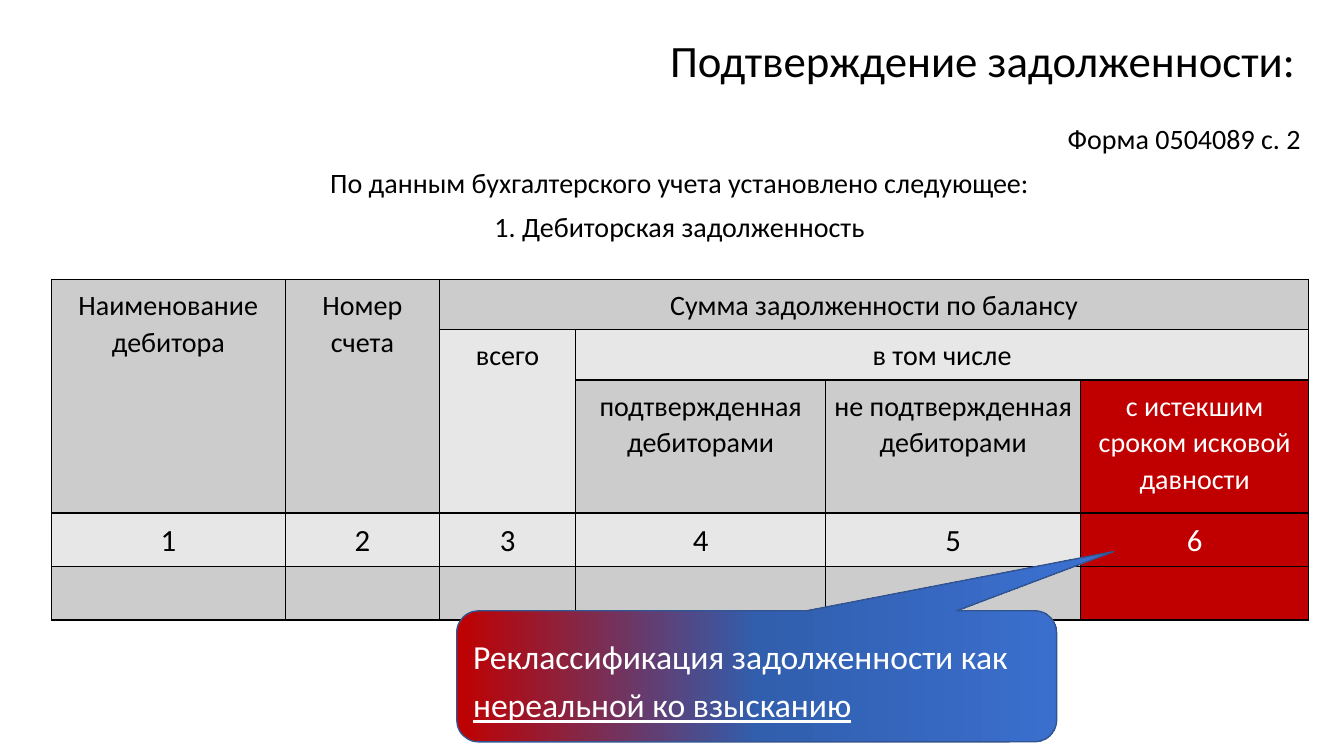
from copy import deepcopy
from dataclasses import dataclass

from lxml import etree
from pptx import Presentation
from pptx import util as u
from pptx.dml.color import RGBColor
from pptx.enum import shapes, text
from pptx.oxml.ns import qn


@dataclass(frozen=True)
class Theme:
    font: str = "Calibri"
    black: str = "000000"
    white: str = "FFFFFF"
    dark_band: str = "CCCCCC"
    light_band: str = "E7E7E7"
    red: str = "C00000"
    callout_stops: tuple = ((0, "C00000"), (0.5, "315EAD"), (1, "3A6FCE"))
    callout_line: str = "325491"
    title_size: int = 32
    body_size: int = 20
    number_size: int = 22
    callout_size: int = 24


theme = Theme()
align = text.PP_ALIGN


def format_paragraph(paragraph, size, color, alignment, spacing):
    paragraph.alignment = alignment
    paragraph.line_spacing = spacing
    for run in paragraph.runs:
        run.font.name = theme.font
        run.font.size = u.Pt(size)
        run.font.color.rgb = RGBColor.from_string(color)


def add_border(cell, side):
    line = etree.SubElement(cell._tc.get_or_add_tcPr(), qn(f"a:ln{side}"), w=str(u.Pt(1)))
    fill = etree.SubElement(line, qn("a:solidFill"))
    etree.SubElement(fill, qn("a:srgbClr"), val=theme.black)


presentation = Presentation()
presentation.slide_width = u.Inches(13.33)
presentation.slide_height = u.Inches(7.5)
slide = presentation.slides.add_slide(presentation.slide_layouts[6])

# Title
title = slide.shapes.add_textbox(u.Inches(3.25), u.Inches(0.36), u.Inches(9.7), u.Inches(0.54))
title.text_frame.word_wrap = True
title.text_frame.vertical_anchor = text.MSO_ANCHOR.MIDDLE
title.text_frame.text = "Подтверждение задолженности:"
format_paragraph(title.text_frame.paragraphs[0], theme.title_size, theme.black, align.RIGHT, 0.9)

# Form heading on a translucent white panel
heading = slide.shapes.add_textbox(u.Inches(0.48), u.Inches(1.19), u.Inches(12.52), u.Inches(4.96))
heading.fill.solid()
heading.fill.fore_color.rgb = RGBColor.from_string(theme.white)
panel_color = heading._element.spPr.find(qn("a:solidFill"))[0]
etree.SubElement(panel_color, qn("a:alpha"), val="77000")
heading.text_frame.word_wrap = True
heading.text_frame.text = "\n".join([
    "Форма 0504089 с. 2",
    "По данным бухгалтерского учета установлено следующее:",
    "1. Дебиторская задолженность",
])
for index, paragraph in enumerate(heading.text_frame.paragraphs):
    alignment = align.CENTER if index else align.RIGHT
    format_paragraph(paragraph, theme.body_size, theme.black, alignment, 0.9)
    if index:
        paragraph.space_before = u.Pt(10)

# Debt table
column_widths = [2.32, 1.53, 1.35, 2.48, 2.53, 2.26]
row_heights = [0.5, 0.5, 1.32, 0.53, 0.53]
number_row = 3
rows = [
    ["Наименование дебитора", "Номер счета", "Сумма задолженности по балансу", "", "", ""],
    ["", "", "всего", "в том числе", "", ""],
    ["", "", "", "подтвержденная дебиторами", "не подтвержденная дебиторами",
     "с истекшим сроком исковой давности"],
    ["1", "2", "3", "4", "5", "6"],
    [""] * 6,
]
merges = [((0, 0), (2, 0)), ((0, 1), (2, 1)), ((0, 2), (0, 5)),
          ((1, 2), (2, 2)), ((1, 3), (1, 5))]

table = slide.shapes.add_table(
    len(rows), len(column_widths), u.Inches(0.51), u.Inches(2.77),
    u.Inches(sum(column_widths)), u.Inches(sum(row_heights))).table
table.first_row = table.horz_banding = False
for column, width in zip(table.columns, column_widths):
    column.width = u.Inches(width)
for row, height in zip(table.rows, row_heights):
    row.height = u.Inches(height)

for row_index, labels in enumerate(rows):
    for column_index, label in enumerate(labels):
        cell = table.cell(row_index, column_index)
        expired = row_index >= 2 and column_index == 5
        band = theme.light_band if row_index % 2 else theme.dark_band
        for side in "LRTB":
            add_border(cell, side)
        cell.fill.solid()
        cell.fill.fore_color.rgb = RGBColor.from_string(theme.red if expired else band)
        cell.margin_left = cell.margin_right = u.Inches(0.04)
        cell.margin_top = cell.margin_bottom = u.Inches(0.07)
        cell.text_frame.text = label
        size = theme.number_size if row_index == number_row else theme.body_size
        color = theme.white if expired else theme.black
        format_paragraph(cell.text_frame.paragraphs[0], size, color, align.CENTER, 1.07)
for first, last in merges:
    table.cell(*first).merge(table.cell(*last))

# Callout pointing at the expired debt column
callout = slide.shapes.add_shape(
    shapes.MSO_SHAPE.ROUNDED_RECTANGULAR_CALLOUT,
    u.Inches(4.53), u.Inches(6.06), u.Inches(5.95), u.Inches(1.3))
for index, value in enumerate((0.595, -0.952, 0.167)):
    callout.adjustments[index] = value
callout.shadow.inherit = False
callout.line.color.rgb = RGBColor.from_string(theme.callout_line)
callout.line.width = u.Pt(1)
callout.fill.gradient()
callout.fill.gradient_angle = 0
stop_list = callout._element.spPr.find(qn("a:gradFill")).find(qn("a:gsLst"))
stop_list.insert(1, deepcopy(stop_list[0]))
for stop, (position, color) in zip(callout.fill.gradient_stops, theme.callout_stops):
    stop.position = position
    stop.color.rgb = RGBColor.from_string(color)

callout.text_frame.word_wrap = True
callout.text_frame.vertical_anchor = text.MSO_ANCHOR.MIDDLE
callout.text_frame.text = "Реклассификация задолженности как "
paragraph = callout.text_frame.paragraphs[0]
underlined = paragraph.add_run()
underlined.text = "нереальной ко взысканию"
underlined.font.underline = True
format_paragraph(paragraph, theme.callout_size, theme.white, align.LEFT, 1.2)

presentation.save("out.pptx")
